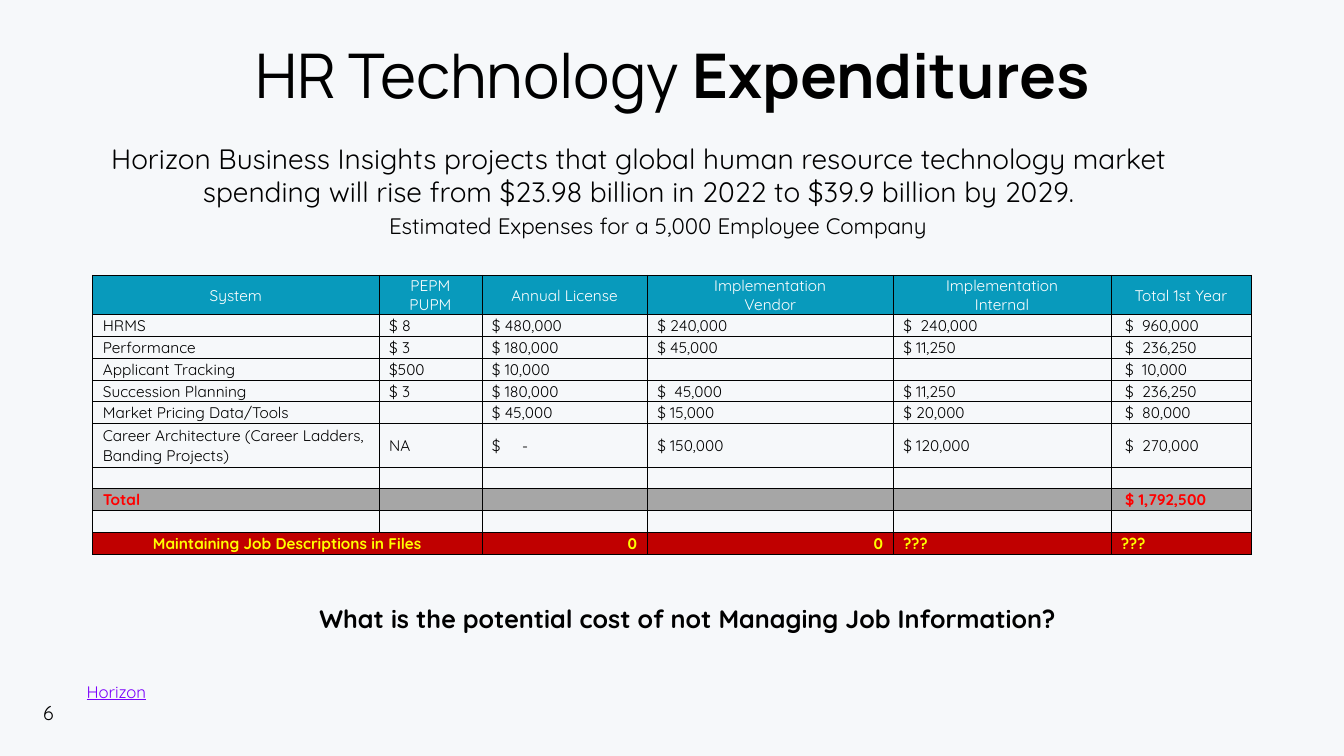
from lxml.etree import SubElement
from pptx import Presentation
from pptx.dml.color import RGBColor
from pptx.enum.text import MSO_ANCHOR, PP_ALIGN
from pptx.oxml.ns import qn
from pptx.util import Inches, Pt

LEFT, CENTER, RIGHT = PP_ALIGN.LEFT, PP_ALIGN.CENTER, PP_ALIGN.RIGHT


def add_run(p, text, size, color="000000", bold=False, font="Quicksand"):
    r = p.add_run()
    r.text = text
    r.font.name = font
    r.font.size = Pt(size)
    r.font.bold = bold
    r.font.color.rgb = RGBColor.from_string(color)
    return r


def add_box(s, x, y, w, h, align=LEFT):
    """Add a wrapping text box and return its text frame and first paragraph."""
    tf = s.shapes.add_textbox(Inches(x), Inches(y), Inches(w), Inches(h)).text_frame
    tf.word_wrap = True
    p = tf.paragraphs[0]
    p.alignment = align
    return tf, p


prs = Presentation()
prs.slide_width, prs.slide_height = Inches(13.33), Inches(7.5)
s = prs.slides.add_slide(prs.slide_layouts[6])
s.background.fill.solid()
s.background.fill.fore_color.rgb = RGBColor.from_string("F6F8FA")

# Page number
tf, p = add_box(s, 0.33, 6.9, 1.46, 0.34)
add_run(p, "6", 14)

# Title
tf, p = add_box(s, 0.72, 0.45, 11.9, 0.65, CENTER)
tf.margin_left = tf.margin_right = tf.margin_top = tf.margin_bottom = 0
tf.vertical_anchor = MSO_ANCHOR.MIDDLE
p.line_spacing = 0.9
add_run(p, "HR Technology ", 44, font="Manrope")
add_run(p, "Expenditures", 44, bold=True, font="Manrope")

# Expense table
header = ["System", "PEPM\nPUPM", "Annual License", "Implementation\nVendor",
          "Implementation\nInternal", "Total 1st Year"]
rows = [
    header,
    ["HRMS", "$ 8", "$ 480,000", "$ 240,000", "$\t240,000", "$\t960,000"],
    ["Performance", "$ 3", "$ 180,000", "$ 45,000", "$ 11,250", "$\t236,250"],
    ["Applicant Tracking", "$500", "$ 10,000", "", "", "$\t10,000"],
    ["Succession Planning", "$ 3", "$ 180,000", "$\t45,000", "$ 11,250", "$\t236,250"],
    ["Market Pricing Data/Tools", "", "$ 45,000", "$ 15,000", "$ 20,000", "$\t80,000"],
    ["Career Architecture (Career Ladders, Banding Projects)", "NA", "$\t-",
     "$ 150,000", "$ 120,000", "$\t270,000"],
    [""] * 6,
    ["Total", "", "", "", "", "$ 1,792,500"],
    [""] * 6,
    ["Maintaining Job Descriptions in Files", "", "0", "0", "???", "???"],
]
col_widths = [2.84, 1.02, 1.64, 2.44, 2.16, 1.39]
HEADER, CAREER, TOTAL, UPKEEP = 0, 6, 8, 10
tall_rows = {HEADER: 0.39, CAREER: 0.43}
row_height = (2.77 - sum(tall_rows.values())) / (len(rows) - len(tall_rows))
# Row styles: fill, text colour, bold
styles = {HEADER: ("089ABC", "FFFFFF", False), TOTAL: ("A6A6A6", "FF0000", True),
          UPKEEP: ("C00000", "FFFF00", True)}

table = s.shapes.add_table(len(rows), len(header), Inches(0.92), Inches(2.73),
                           Inches(sum(col_widths)), Inches(2.77)).table
table.first_row = table.horz_banding = False
for column, width in zip(table.columns, col_widths):
    column.width = Inches(width)

for i, row in enumerate(rows):
    table.rows[i].height = Inches(tall_rows.get(i, row_height))
    fill, color, bold = styles.get(i, (None, "000000", False))
    for j, text in enumerate(row):
        cell = table.cell(i, j)
        cell.vertical_anchor = MSO_ANCHOR.MIDDLE
        total_amount = j == len(header) - 1 and text.startswith("$")
        cell.margin_left = Inches(0.14 if total_amount else 0.1)
        cell.margin_right = Inches(0.1)
        cell.margin_top, cell.margin_bottom = Inches(0.01), 0

        tcPr = cell._tc.get_or_add_tcPr()
        for side in ("a:lnL", "a:lnR", "a:lnT", "a:lnB"):
            ln = SubElement(tcPr, qn(side), w=str(Pt(0.5)))
            SubElement(SubElement(ln, qn("a:solidFill")), qn("a:srgbClr"), val="000000")
        if fill:
            cell.fill.solid()
            cell.fill.fore_color.rgb = RGBColor.from_string(fill)
        else:
            cell.fill.background()

        p = cell.text_frame.paragraphs[0]
        if i == HEADER or (i == UPKEEP and j == 0):
            p.alignment = CENTER
        elif text == "0":
            p.alignment = RIGHT
        if "\t" in text:
            tabs = SubElement(p._p.get_or_add_pPr(), qn("a:tabLst"))
            stop = Inches(0.3 if text.endswith("-") else 0.17)
            SubElement(tabs, qn("a:tab"), pos=str(stop), algn="l")
        if not text:
            SubElement(p._p, qn("a:endParaRPr"), sz="1100")
            continue
        for n, line in enumerate(text.split("\n")):
            if n:
                p.add_line_break()
            add_run(p, line, 11, color, bold)

table.cell(UPKEEP, 0).merge(table.cell(UPKEEP, 1))

# Market outlook
tf, p = add_box(s, 0.77, 1.35, 11.13, 1.19, CENTER)
add_run(p, "Horizon Business Insights projects that global human resource technology market "
           "spending will rise from $23.98 billion in 2022 to $39.9 billion by 2029.", 20)
p = tf.add_paragraph()
p.alignment = CENTER
p.space_before = Pt(3)
p._p.get_or_add_pPr().set("marL", str(Inches(0.38)))
add_run(p, "Estimated Expenses for a 5,000 Employee Company", 16)

# Closing question
tf, p = add_box(s, 2.42, 5.94, 8.8, 0.4, CENTER)
add_run(p, "What is the potential cost of not Managing Job Information?", 18, bold=True)

# Source
tf, p = add_box(s, 0.76, 6.71, 2.11, 0.3)
add_run(p, "Horizon", 12, "7B00FC").font.underline = True

prs.save("out.pptx")
